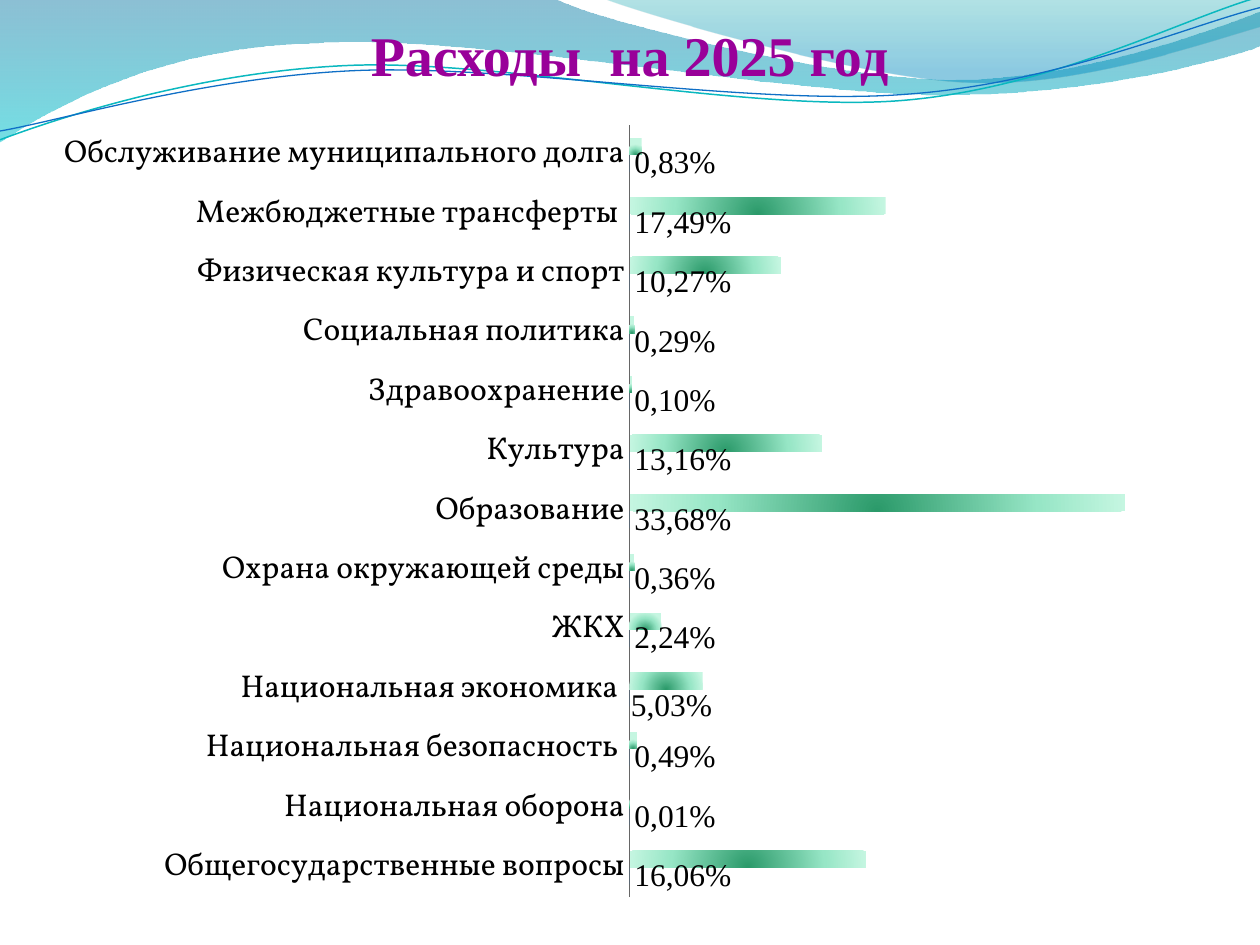
from dataclasses import dataclass
from math import cos, radians, sin

from lxml import etree
from pptx import Presentation
from pptx.chart.data import CategoryChartData
from pptx.dml.color import RGBColor
from pptx.enum.chart import XL_CHART_TYPE as ChartType
from pptx.enum.chart import XL_LABEL_POSITION as LabelPosition
from pptx.enum.chart import XL_TICK_LABEL_POSITION as TickLabels
from pptx.enum.chart import XL_TICK_MARK as TickMark
from pptx.enum.text import MSO_ANCHOR, PP_ALIGN
from pptx.oxml import parse_xml
from pptx.oxml.ns import nsdecls, qn
from pptx.util import Inches, Pt


@dataclass(frozen=True)
class Theme:
    title_font: str = "Times New Roman"
    chart_font: str = "Vollkorn"
    title_size: int = 32
    chart_size: int = 18
    title: str = "990099"
    text: str = "000000"
    axis: str = "666666"
    share: str = "0F6FC6"
    # gradient stops: position %, colour, opacity %
    left_wave: tuple = ((0, "0074A1", 45), (100, "00C6CF", 55))
    right_wave: tuple = ((0, "00A1A9", 30), (80, "008BBF", 45))
    bar: tuple = ((0, "2B9A6A", 100), (65, "97E6C6", 100), (100, "C5F6E1", 100))
    teal_line: str = "0AB8BF"
    blue_line: str = "0F6FC6"


THEME = Theme()
DOWNWARD = '<a:lin ang="5400000" scaled="0"/>'
FROM_BOTTOM = ('<a:path path="circle">'
               '<a:fillToRect l="50000" t="100000" r="50000" b="0"/></a:path>')
CURVE_TILT = 357.3

# Outlines: start point, then corners (x, y) or cubic curves (x1, y1, x2, y2, x, y)
LEFT_WAVE = [(0, 0), (4.4, -0.01), (4.76, 0.17, 6.64, 0.63, 7.58, 0.63),
             (8.53, 0.63, 9.58, 0.26, 10, 0.09), (10.01, 0.36),
             (9.83, 0.44, 8.7, 0.76, 7.46, 0.75), (6.22, 0.75, 3.82, 0.28, 2.57, 0.34),
             (1.29, 0.36, 0.46, 0.83, -0.01, 1.13), (0, 0)]
RIGHT_WAVE = [(4.79, -0.01), (5.09, 0.11, 6.82, 0.62, 7.69, 0.65),
              (8.56, 0.69, 9.61, 0.32, 10, 0.21), (10, 0), (4.79, -0.01)]
TEAL_CURVE = [(0, 1.11), (0.48, 0.93, 1.58, 0.57, 2.77, 0.52),
              (3.95, 0.47, 5.93, 0.89, 7.13, 0.8), (8.33, 0.71, 9.38, 0.15, 9.98, -0.02)]
BLUE_CURVE = [(0, 1.04), (0.47, 0.96, 1.64, 0.61, 2.83, 0.56),
              (4.03, 0.51, 5.97, 0.84, 7.17, 0.75), (8.36, 0.67, 9.41, 0.21, 10, 0.06)]

# Category, share of spending, amount
SPENDING = [
    ("Общегосударственные вопросы", 0.1606, 97000),
    ("Национальная оборона", 0.0001, 0),
    ("Национальная безопасность ", 0.0049, 3000),
    ("Национальная экономика ", 0.0503, 30000),
    ("ЖКХ", 0.0224, 13000),
    ("Охрана окружающей среды", 0.0036, 2000),
    ("Образование", 0.3368, 203000),
    ("Культура", 0.1316, 79000),
    ("Здравоохранение", 0.001, 1000),
    ("Социальная политика", 0.0029, 2000),
    ("Физическая культура и спорт", 0.1027, 62000),
    ("Межбюджетные трансферты ", 0.1749, 105000),
    ("Обслуживание муниципального долга", 0.0083, 5000),
]
LOWERED_LABEL = 3


def style_font(font, name, size, color, bold=False):
    for attribute, value in {"name": name, "size": Pt(size), "bold": bold}.items():
        setattr(font, attribute, value)
    font.color.rgb = RGBColor.from_string(color)


def set_gradient(fill, properties, stops, direction):
    """Fill with stops that may be see-through, running in the given direction."""
    fill.gradient()
    stop_list = "".join(
        f'<a:gs pos="{position * 1000}"><a:srgbClr val="{color}">'
        f'<a:alpha val="{opacity * 1000}"/></a:srgbClr></a:gs>'
        for position, color, opacity in stops)
    gradient = parse_xml(f'<a:gradFill {nsdecls("a")} rotWithShape="1">'
                         f'<a:gsLst>{stop_list}</a:gsLst>{direction}</a:gradFill>')
    properties.replace(properties.find(qn("a:gradFill")), gradient)


def add_outline(slide, box, outline, closed, rotation=0):
    """Draw an outline of cubic curves, given as it lies on the slide after rotation."""
    left, top, width, height = box
    middle_x, middle_y = left + width / 2, top + height / 2
    cosine, sine = cos(radians(-rotation)), sin(radians(-rotation))
    corners = [(left + width, top), (left + width, top + height), (left, top + height)]
    builder = slide.shapes.build_freeform(Inches(left), Inches(top))
    builder.add_line_segments([(Inches(x), Inches(y)) for x, y in corners], close=closed)
    shape = builder.convert_to_shape()
    shape.shadow.inherit = False
    shape.rotation = rotation

    track = shape._element.spPr.find(".//" + qn("a:path"))
    for step in list(track):
        track.remove(step)
    for index, segment in enumerate(outline):
        tag = "a:moveTo" if index == 0 else "a:lnTo" if len(segment) == 2 else "a:cubicBezTo"
        step = etree.SubElement(track, qn(tag))
        for x, y in zip(segment[::2], segment[1::2]):
            dx, dy = x - middle_x, y - middle_y
            point = etree.SubElement(step, qn("a:pt"))
            point.set("x", str(Inches(width / 2 + dx * cosine - dy * sine)))
            point.set("y", str(Inches(height / 2 + dx * sine + dy * cosine)))
    if closed:
        etree.SubElement(track, qn("a:close"))
    return shape


def add_wave(slide, box, outline, stops):
    wave = add_outline(slide, box, outline, closed=True)
    set_gradient(wave.fill, wave._element.spPr, stops, DOWNWARD)
    wave.line.fill.background()


def add_curve(slide, box, outline, color, width):
    curve = add_outline(slide, box, outline, closed=False, rotation=CURVE_TILT)
    curve.fill.background()
    curve.line.color.rgb = RGBColor.from_string(color)
    curve.line.width = Pt(width)


def add_title(slide, text):
    box = slide.shapes.add_textbox(Inches(0), Inches(0.23), Inches(10), Inches(0.47))
    frame = box.text_frame
    settings = {"word_wrap": True, "vertical_anchor": MSO_ANCHOR.BOTTOM, "margin_left": 0,
                "margin_top": Inches(0.05), "margin_right": 0, "margin_bottom": 0}
    for attribute, value in settings.items():
        setattr(frame, attribute, value)
    paragraph = frame.paragraphs[0]
    paragraph.alignment = PP_ALIGN.CENTER
    run = paragraph.add_run()
    run.text = text
    style_font(run.font, THEME.title_font, THEME.title_size, THEME.title, bold=True)


def make_layout(**values):
    layout = parse_xml(f'<c:layout {nsdecls("c")}><c:manualLayout/></c:layout>')
    for tag, value in values.items():
        etree.SubElement(layout[0], qn(f"c:{tag}")).set("val", str(value))
    return layout


def place_plot(chart):
    plot_area = chart._chartSpace.chart.plotArea
    for old in plot_area.findall(qn("c:layout")):
        plot_area.remove(old)
    plot_area.insert(0, make_layout(layoutTarget="inner", xMode="edge", yMode="edge",
                                    x=0.496, y=0.024, w=0.504, h=0.953))


def label_shares(series):
    labels = series.data_labels
    settings = {"show_value": True, "number_format": "0.00%",
                "number_format_is_linked": False, "position": LabelPosition.OUTSIDE_END}
    for attribute, value in settings.items():
        setattr(labels, attribute, value)
    style_font(labels.font, THEME.title_font, THEME.chart_size, THEME.text)
    for index, (_, share, _) in enumerate(SPENDING):
        label = series.points[index].data_label
        run = label.text_frame.paragraphs[0].add_run()
        run.text = f"{share:.2%}".replace(".", ",")
        style_font(run.font, THEME.title_font, THEME.chart_size, THEME.text)
        label.position = LabelPosition.OUTSIDE_END
        if index == LOWERED_LABEL:
            label._dLbl.insert(1, make_layout(x=-0.003, y=0.01))


def add_spending_chart(slide):
    categories, shares, amounts = zip(*SPENDING)
    data = CategoryChartData()
    data.categories = categories
    data.add_series("Series 1", shares, number_format="0.00%")
    data.add_series("Series 2", amounts)
    chart = slide.shapes.add_chart(ChartType.BAR_CLUSTERED, Inches(0.23), Inches(0.84),
                                   Inches(9.61), Inches(6.43), data).chart
    chart.has_legend = chart.has_title = False
    style_font(chart.font, THEME.chart_font, THEME.chart_size, THEME.text)
    place_plot(chart)

    names = chart.category_axis
    names.major_tick_mark = names.minor_tick_mark = TickMark.NONE
    names.tick_label_position = TickLabels.NEXT_TO_AXIS
    names.format.line.color.rgb = RGBColor.from_string(THEME.axis)
    scale = chart.value_axis
    scale.visible = scale.has_major_gridlines = False
    scale.tick_labels.number_format = "0.00%"
    scale.tick_labels.number_format_is_linked = False

    plot = chart.plots[0]
    plot.gap_width, plot.vary_by_categories = 150, False
    share_bars, amount_bars = plot.series
    share_bars.format.fill.solid()
    share_bars.format.fill.fore_color.rgb = RGBColor.from_string(THEME.share)
    label_shares(share_bars)
    set_gradient(amount_bars.format.fill, amount_bars._element.spPr, THEME.bar, FROM_BOTTOM)


def main():
    deck = Presentation()
    deck.slide_width, deck.slide_height = Inches(10), Inches(7.5)
    slide = deck.slides.add_slide(deck.slide_layouts[6])
    add_wave(slide, (-0.01, -0.01, 10.02, 1.14), LEFT_WAVE, THEME.left_wave)
    add_wave(slide, (4.79, -0.01, 5.21, 0.7), RIGHT_WAVE, THEME.right_wave)
    add_curve(slide, (-0.02, 0.22, 10.02, 0.71), TEAL_CURVE, THEME.teal_line, 0.85)
    add_curve(slide, (-0.02, 0.3, 10.03, 0.58), BLUE_CURVE, THEME.blue_line, 0.75)
    add_title(slide, "Расходы  на 2025 год")
    add_spending_chart(slide)
    deck.save("out.pptx")


if __name__ == "__main__":
    main()
